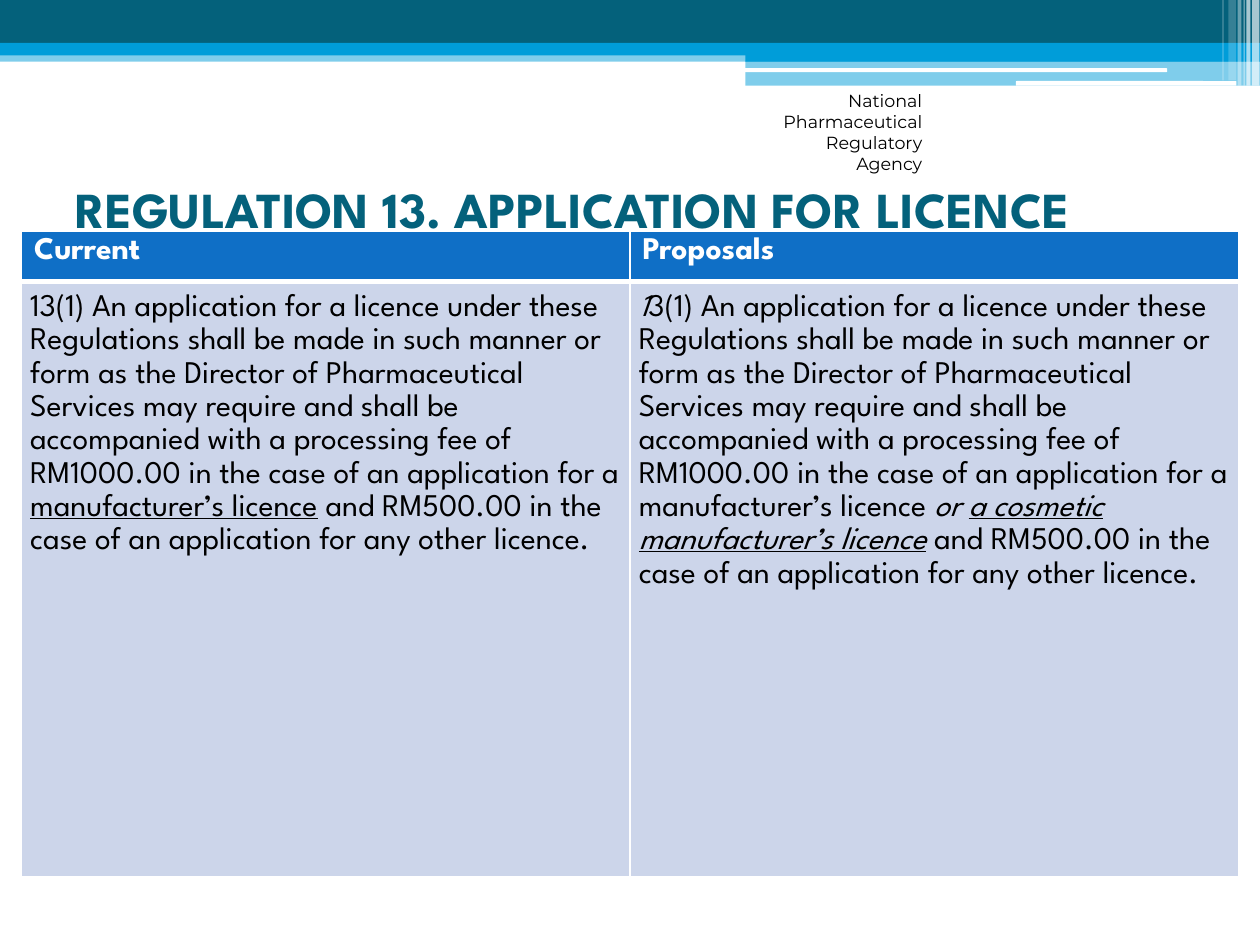
from typing import NamedTuple

from lxml import etree
from pptx import Presentation
from pptx.dml.color import RGBColor
from pptx.enum.shapes import MSO_SHAPE
from pptx.enum.text import MSO_ANCHOR, PP_ALIGN
from pptx.oxml.ns import qn
from pptx.util import Pt

RECT = MSO_SHAPE.RECTANGLE
ROUND = MSO_SHAPE.ROUNDED_RECTANGLE
RIGHT = PP_ALIGN.RIGHT
MIDDLE = MSO_ANCHOR.MIDDLE

WHITE = RGBColor(0xFF, 0xFF, 0xFF)
BLACK = RGBColor(0, 0, 0)
TEAL = RGBColor(0x04, 0x61, 0x7B)
SKY = RGBColor(0x00, 0x9D, 0xD9)
HEADER_BLUE = RGBColor(0x0F, 0x6F, 0xC6)
BODY_BLUE = RGBColor(0xCC, 0xD5, 0xEA)
HEADING_FONT = "League Spartan"
AGENCY_FONT = "Montserrat"


class Bar(NamedTuple):
    x: float
    y: float
    w: float
    h: float
    color: RGBColor
    alpha: int = 100
    kind: int = RECT


class Span(NamedTuple):
    text: str
    italic: bool = False
    underline: bool = False


BARS = [
    Bar(0, 28.8, 720, 6.5, SKY, 50),
    Bar(0, 0, 720, 24.5, TEAL),
    Bar(0, 24.5, 720, 7.2, SKY),
    Bar(426, 28, 294, 7.2, SKY),
    Bar(426, 34.7, 294, 14.2, SKY, 50),
    Bar(425.5, 39, 241.5, 2.2, WHITE, kind=ROUND),
    Bar(580.5, 46.3, 126, 2.7, WHITE, kind=ROUND),
    Bar(715.5, 0, 4.2, 49, WHITE, 65),
    Bar(712.3, 0, 2.2, 49, WHITE, 65),
    Bar(710.6, 0, 0.7, 49, WHITE, 60),
    Bar(707.2, 0, 2.2, 49, WHITE, 40),
    Bar(702, 0, 4.3, 46, WHITE, 20),
    Bar(698.5, 0, 0.7, 46, WHITE, 30),
]

OPENING = (
    "3(1) An application for a licence under these Regulations shall be made in "
    "such manner or form as the Director of Pharmaceutical Services may require "
    "and shall be accompanied with a processing fee of RM1000.00 in the case of "
    "an application for a"
)
CLOSING = "and RM500.00 in the case of an application for any other licence."

COLUMNS = {
    "Current": [
        Span("1" + OPENING),
        Span(" manufacturer’s licence", underline=True),
        Span(" " + CLOSING),
    ],
    "Proposals": [
        Span("1", italic=True),
        Span(OPENING + " manufacturer’s licence "),
        Span("or ", italic=True),
        Span("a cosmetic manufacturer’s licence", italic=True, underline=True),
        Span(" " + CLOSING),
    ],
}


def add_run(p, text: str, *, font: str, size: float, color: RGBColor,
            bold: bool = False, italic: bool = False,
            underline: bool = False) -> None:
    r = p.add_run()
    r.text = text
    r.font.name = font
    r.font.size = Pt(size)
    r.font.color.rgb = color
    r.font.bold = bold
    r.font.italic = italic
    r.font.underline = underline


def add_bar(s, bar: Bar) -> None:
    sp = s.shapes.add_shape(bar.kind, Pt(bar.x), Pt(bar.y), Pt(bar.w), Pt(bar.h))
    sp.shadow.inherit = False
    sp.line.fill.background()
    sp.fill.solid()
    sp.fill.fore_color.rgb = bar.color
    if bar.alpha < 100:
        clr = sp.fill._xPr.find(".//" + qn("a:srgbClr"))
        etree.SubElement(clr, qn("a:alpha"), val=str(bar.alpha * 1000))


def add_box(s, x: float, y: float, w: float, h: float):
    tf = s.shapes.add_textbox(Pt(x), Pt(y), Pt(w), Pt(h)).text_frame
    tf.word_wrap = True
    return tf


def style_cell(cell, color: RGBColor, top: float, bottom: float) -> None:
    tcPr = cell._tc.get_or_add_tcPr()
    for side, width in (("L", 1), ("R", 1), ("T", top), ("B", bottom)):
        ln = etree.SubElement(tcPr, qn(f"a:ln{side}"), w=str(Pt(width)))
        fill = etree.SubElement(ln, qn("a:solidFill"))
        etree.SubElement(fill, qn("a:srgbClr"), val=str(WHITE))
    cell.fill.solid()
    cell.fill.fore_color.rgb = color


def add_comparison(s, x: float, y: float, col_w: float,
                   heights: tuple[float, float]) -> None:
    table = s.shapes.add_table(2, len(COLUMNS), Pt(x), Pt(y),
                               Pt(col_w * len(COLUMNS)), Pt(sum(heights))).table
    for row, height in zip(table.rows, heights):
        row.height = Pt(height)
    for i, (heading, spans) in enumerate(COLUMNS.items()):
        table.columns[i].width = Pt(col_w)
        head, body = table.cell(0, i), table.cell(1, i)
        style_cell(head, HEADER_BLUE, 1, 3)
        add_run(head.text_frame.paragraphs[0], heading, font=HEADING_FONT,
                size=18, color=WHITE, bold=True)
        style_cell(body, BODY_BLUE, 3, 1)
        body.margin_left = body.margin_right = Pt(5)
        body.margin_top = body.margin_bottom = Pt(5)
        p = body.text_frame.paragraphs[0]
        p.line_spacing = 1.15
        for span in spans:
            add_run(p, span.text, font=HEADING_FONT, size=18, color=BLACK,
                    italic=span.italic, underline=span.underline)


def main() -> None:
    prs = Presentation()
    prs.slide_width, prs.slide_height = Pt(720), Pt(540)
    s = prs.slides.add_slide(prs.slide_layouts[6])
    for bar in BARS:
        add_bar(s, bar)

    tf = add_box(s, 414, 48, 120, 36)
    for i, line in enumerate(("National", "Pharmaceutical Regulatory", "Agency")):
        p = tf.add_paragraph() if i else tf.paragraphs[0]
        p.alignment = RIGHT
        add_run(p, line, font=AGENCY_FONT, size=10, color=BLACK)

    tf = add_box(s, 36, 108, 648, 48)
    tf.vertical_anchor = MIDDLE
    tf.margin_bottom = Pt(30)
    add_run(tf.paragraphs[0], "REGULATION 13. APPLICATION FOR LICENCE",
            font=HEADING_FONT, size=28.8, color=TEAL, bold=True)

    add_comparison(s, 12.25, 132, 347.8, (25, 340))
    prs.save("out.pptx")


if __name__ == "__main__":
    main()
